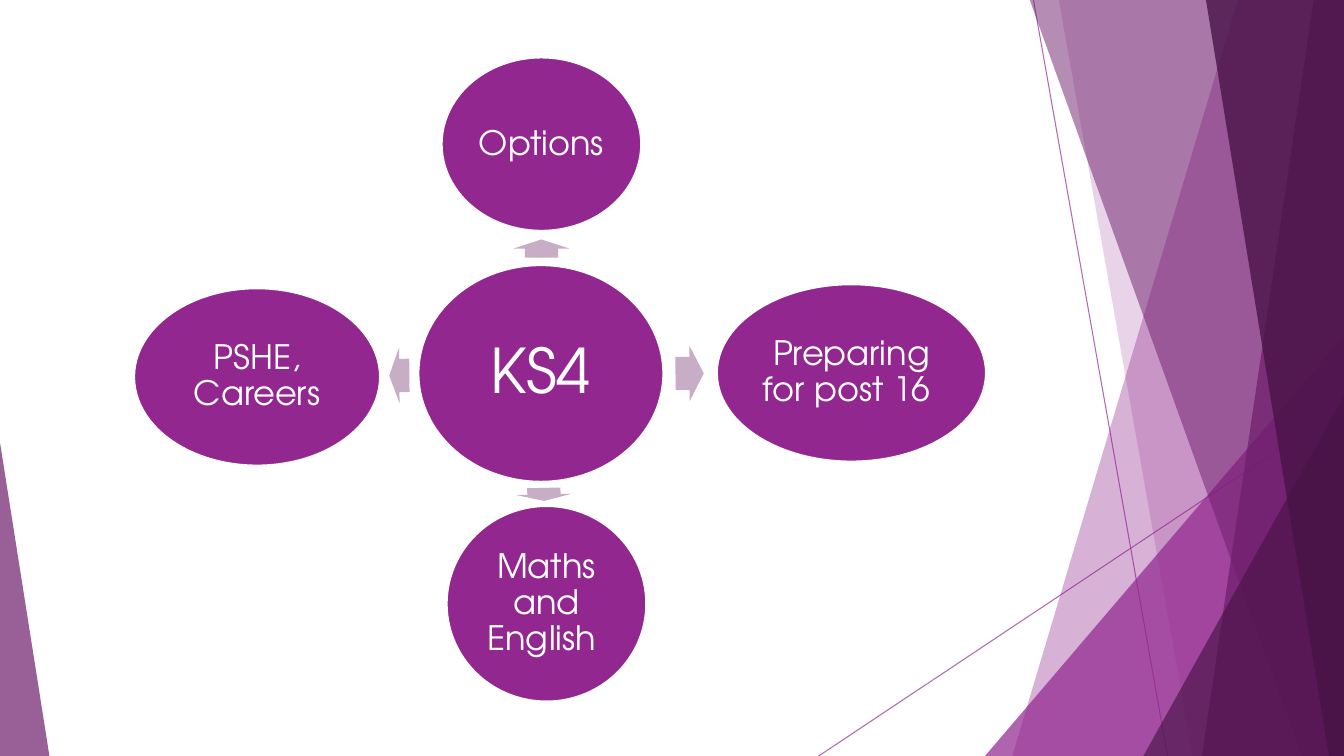
from dataclasses import dataclass

from lxml import etree
from pptx import Presentation
from pptx.dml.color import RGBColor
from pptx.enum import shapes, text
from pptx.oxml import ns
from pptx.util import Inches, Pt

PURPLE = RGBColor(0x92, 0x27, 0x8F)
DEEP_PURPLE = RGBColor(0x6D, 0x1D, 0x6B)
DARK_PURPLE = RGBColor(0x49, 0x14, 0x47)
MAUVE = RGBColor(0xC7, 0xAD, 0xC6)
WHITE = RGBColor(0xFF, 0xFF, 0xFF)
FONT = "TeX Gyre Adventor"
WIDTH, HEIGHT = 13.33, 7.5
BAND_TOP = -0.01
ARROW_BREADTH = 0.55


@dataclass
class Ray:
    start: tuple[float, float]
    end: tuple[float, float]


@dataclass
class Band:
    """Area from a slanted left edge to the right side of the slide."""
    top_x: float
    bottom_x: float
    color: RGBColor
    opacity: int


@dataclass
class Wedge:
    """Right-angled triangle standing on the bottom of the slide."""
    left: float
    top: float
    width: float
    apex: float
    color: RGBColor
    opacity: int


@dataclass
class Bubble:
    left: float
    top: float
    width: float
    height: float
    label: str
    size: int = 24
    inset: float = 0.03


@dataclass
class Arrow:
    left: float
    top: float
    length: float
    rotation: float


RAYS = [Ray((10.25, 0), (11.58, HEIGHT)), Ray((WIDTH, 4.03), (8.12, HEIGHT))]
FACETS = [
    Band(12.28, 10.04, PURPLE, 36),
    Band(10.5, 11.83, PURPLE, 20),
    Wedge(9.77, 3.33, 3.56, 1, PURPLE, 72),
    Band(10.21, 12.91, DEEP_PURPLE, 50),
    Band(13.03, 11.92, DEEP_PURPLE, 70),
    Band(11.96, 13.18, DARK_PURPLE, 80),
    Wedge(11.34, 3.93, 1.99, 1, DARK_PURPLE, 66),
    Wedge(0, 4.39, 0.49, 0, DEEP_PURPLE, 70),
]
BUBBLES = [
    Bubble(4.15, 2.63, 2.43, 2.15, "KS4", 44, 0.06),
    Bubble(4.38, 0.57, 1.98, 1.72, "Options"),
    Bubble(7.11, 2.82, 2.67, 1.76, "Preparing for post 16 "),
    Bubble(4.43, 5.02, 1.98, 1.94, "Maths and English "),
    Bubble(1.33, 2.86, 2.44, 1.76, "PSHE, Careers"),
]
ARROWS = [
    Arrow(5.28, 2.19, 0.18, 270),
    Arrow(6.7, 3.43, 0.28, 359.7),
    Arrow(5.33, 4.63, 0.13, 88.7),
    Arrow(3.86, 3.45, 0.2, 179.4),
]


def set_opacity(shape, percent: int) -> None:
    color = shape.element.find(".//" + ns.qn("a:srgbClr"))
    etree.SubElement(color, ns.qn("a:alpha"), val=str(percent * 1000))


def fill_plain(shape, color: RGBColor) -> None:
    """Give a flat fill without outline or shadow."""
    shape.shadow.inherit = False
    shape.fill.solid()
    shape.fill.fore_color.rgb = color
    shape.line.fill.background()


def draw_ray(slide, ray: Ray) -> None:
    connector = slide.shapes.add_connector(
        shapes.MSO_CONNECTOR.STRAIGHT, *map(Inches, ray.start + ray.end))
    connector.line.color.rgb = PURPLE
    connector.line.width = Pt(0.75)
    set_opacity(connector, 70)
    etree.SubElement(connector.element.spPr, ns.qn("a:effectLst"))


def draw_facet(slide, facet: Band | Wedge) -> None:
    if isinstance(facet, Band):
        corners = [(WIDTH, BAND_TOP), (WIDTH, HEIGHT), (facet.bottom_x, HEIGHT)]
        builder = slide.shapes.build_freeform(Inches(facet.top_x), Inches(BAND_TOP))
        builder.add_line_segments([(Inches(x), Inches(y)) for x, y in corners])
        shape = builder.convert_to_shape()
    else:
        shape = slide.shapes.add_shape(
            shapes.MSO_SHAPE.ISOSCELES_TRIANGLE, Inches(facet.left), Inches(facet.top),
            Inches(facet.width), Inches(HEIGHT - facet.top))
        shape.adjustments[0] = facet.apex
    fill_plain(shape, facet.color)
    set_opacity(shape, facet.opacity)


def draw_bubble(slide, bubble: Bubble) -> None:
    shape = slide.shapes.add_shape(
        shapes.MSO_SHAPE.OVAL, Inches(bubble.left), Inches(bubble.top),
        Inches(bubble.width), Inches(bubble.height))
    fill_plain(shape, PURPLE)
    shape.line.color.rgb = WHITE
    shape.line.width = Pt(1.5)
    frame = shape.text_frame
    frame.word_wrap = True
    frame.vertical_anchor = text.MSO_ANCHOR.MIDDLE
    frame.margin_left = frame.margin_right = Inches(bubble.inset)
    frame.margin_top = frame.margin_bottom = Inches(bubble.inset)
    paragraph = frame.paragraphs[0]
    paragraph.alignment = text.PP_ALIGN.CENTER
    paragraph.line_spacing = 0.9
    run = paragraph.add_run()
    run.text = bubble.label
    run.font.name = FONT
    run.font.size = Pt(bubble.size)
    run.font.color.rgb = WHITE


def draw_arrow(slide, arrow: Arrow) -> None:
    shape = slide.shapes.add_shape(
        shapes.MSO_SHAPE.RIGHT_ARROW, Inches(arrow.left), Inches(arrow.top),
        Inches(arrow.length), Inches(ARROW_BREADTH))
    shape.adjustments[0] = 0.6
    shape.adjustments[1] = 0.5
    shape.rotation = arrow.rotation
    fill_plain(shape, MAUVE)


def main() -> None:
    presentation = Presentation()
    presentation.slide_width = Inches(WIDTH)
    presentation.slide_height = Inches(HEIGHT)
    slide = presentation.slides.add_slide(presentation.slide_layouts[6])
    for ray in RAYS:
        draw_ray(slide, ray)
    for facet in FACETS:
        draw_facet(slide, facet)
    for bubble in BUBBLES:
        draw_bubble(slide, bubble)
    for arrow in ARROWS:
        draw_arrow(slide, arrow)
    presentation.save("out.pptx")


if __name__ == "__main__":
    main()
